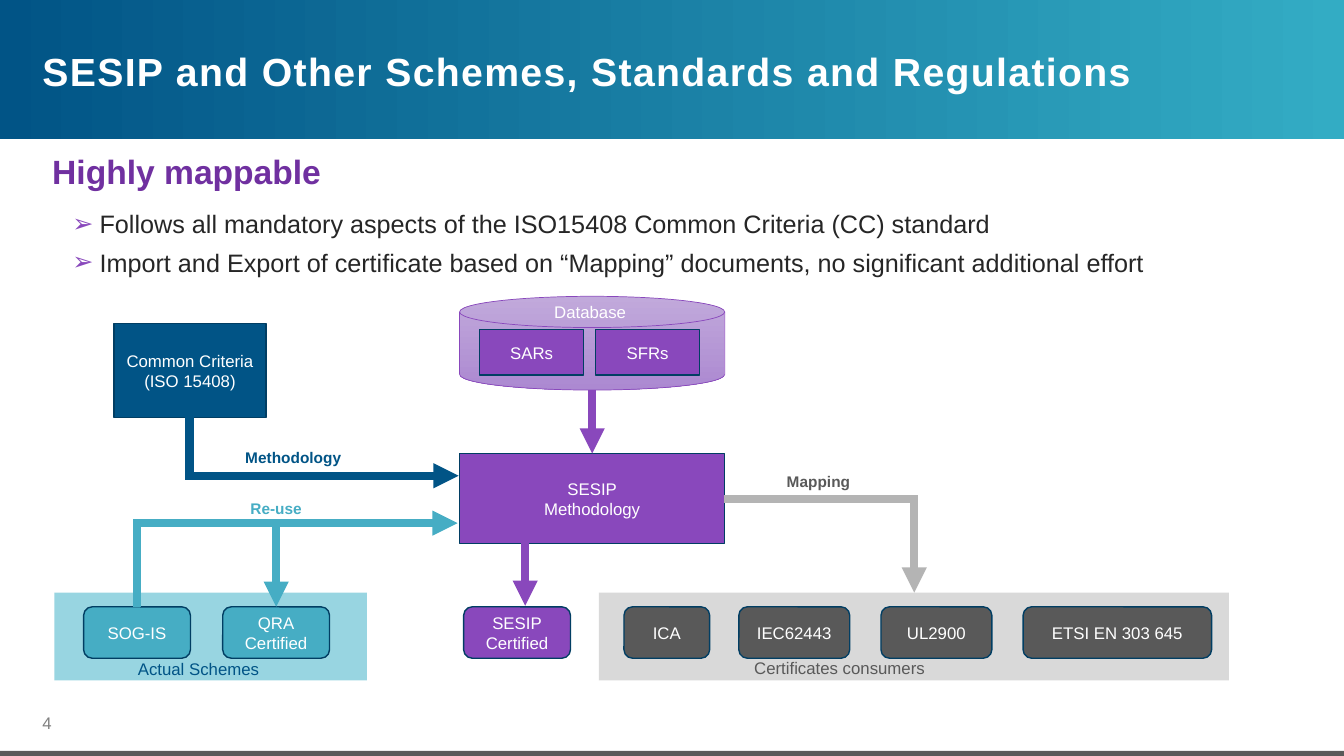
from lxml.etree import SubElement
from pptx import Presentation
from pptx.dml.color import RGBColor
from pptx.enum.shapes import MSO_CONNECTOR, MSO_SHAPE
from pptx.enum.text import MSO_ANCHOR, MSO_AUTO_SIZE, PP_ALIGN
from pptx.oxml.ns import qn
from pptx.util import Inches, Pt

COLS, ROWS = 133.33, 75
CELL = 0.1
FONT = "Arial"
HUES = {
    "navy": "015486", "edge": "013E63", "teal": "46ADC4", "aqua": "33ACC4",
    "plum": "8948BC", "violet": "7030A0", "lilac": "C1A9DB", "mauve": "AC89D1",
    "dark": "595959", "grey": "B4B4B4", "mid": "808080", "ink": "262626",
    "white": "FFFFFF",
}


def hue(name):
    return RGBColor.from_string(HUES[name])


def grid(*cells):
    return [Inches(round(cell * CELL, 3)) for cell in cells]


def style(par, size, color, bold=False):
    for run in par.runs:
        font = run.font
        font.name, font.size, font.bold = FONT, Pt(size), bold
        font.color.rgb = hue(color)


def blend(fill, first, last, angle):
    fill.gradient()
    fill.gradient_angle = angle
    for stop, name in zip(fill.gradient_stops, (first, last)):
        stop.color.rgb = hue(name)


def shape(slide, kind, place, fill=None, line=None, width=1, alpha=None):
    item = slide.shapes.add_shape(kind, *grid(*place))
    item.shadow.inherit = False
    if fill:
        item.fill.solid()
        item.fill.fore_color.rgb = hue(fill)
    if alpha:
        tint = item.fill._xPr.find(".//" + qn("a:srgbClr"))
        SubElement(tint, qn("a:alpha"), val=str(alpha * 1000))
    if line:
        item.line.color.rgb = hue(line)
        item.line.width = Pt(width)
    else:
        item.line.fill.background()
    return item


def box(slide, text, place, fill, kind=MSO_SHAPE.RECTANGLE):
    item = shape(slide, kind, place, fill, "edge")
    frame = item.text_frame
    frame.text = text
    frame.vertical_anchor = MSO_ANCHOR.MIDDLE
    for par in frame.paragraphs:
        par.alignment = PP_ALIGN.CENTER
        style(par, 12, "white")
    return item


def bare(frame):
    frame.margin_left = frame.margin_right = 0
    frame.margin_top = frame.margin_bottom = 0
    frame.vertical_anchor = MSO_ANCHOR.MIDDLE
    frame.word_wrap = True


def label(slide, text, place, color, size=12, bold=False, align=PP_ALIGN.CENTER):
    frame = slide.shapes.add_textbox(*grid(*place)).text_frame
    bare(frame)
    frame.text = text
    par = frame.paragraphs[0]
    par.alignment = align
    style(par, size, color, bold)


def arrow(slide, ends, color, tip="tailEnd", bent=False):
    kind = MSO_CONNECTOR.ELBOW if bent else MSO_CONNECTOR.STRAIGHT
    link = slide.shapes.add_connector(kind, *grid(*ends))
    link.line.color.rgb = hue(color)
    link.line.width = Pt(6)
    props = link._element.spPr
    if bent:
        props.find(qn("a:prstGeom")).set("prst", "bentConnector2")
    stroke = props.find(qn("a:ln"))
    SubElement(stroke, qn("a:miter"), lim="800000")
    SubElement(stroke, qn("a:" + tip), type="triangle")
    SubElement(props, qn("a:effectLst"))
    return link


def frame_page(slide):
    band = shape(slide, MSO_SHAPE.RECTANGLE, (0, 0, COLS, 13.8))
    blend(band.fill, "navy", "aqua", 0)
    shape(slide, MSO_SHAPE.RECTANGLE, (0, ROWS - 0.5, COLS, 0.5), "dark")
    label(slide, "4", (4.2, 68.8, 2.7, 5.8), "mid", align=PP_ALIGN.LEFT)


def head(slide, text):
    title = slide.shapes.title
    slide.shapes._spTree.append(title._element)
    title.left, title.top, title.width, title.height = grid(4.2, 2.5, 125, 10)
    frame = title.text_frame
    bare(frame)
    frame.auto_size = MSO_AUTO_SIZE.NONE
    frame.text = text
    par = frame.paragraphs[0]
    par.alignment = PP_ALIGN.LEFT
    par.line_spacing = 0.8
    style(par, 28, "white", True)
    par.runs[0].font._element.set("spc", "100")


def bullet(par):
    props = par._p.get_or_add_pPr()
    props.set("marL", str(Inches(0.47)))
    props.set("indent", str(Inches(-0.27)))
    paint = SubElement(props, qn("a:buClr"))
    SubElement(paint, qn("a:srgbClr"), val=HUES["plum"])
    SubElement(props, qn("a:buFont"), typeface=FONT)
    SubElement(props, qn("a:buChar"), char="➢")


def body(slide, lead, points):
    frame = slide.shapes.add_textbox(*grid(4.2, 14.5, 125, 14)).text_frame
    frame.word_wrap = True
    frame.text = lead
    first = frame.paragraphs[0]
    first.space_after = Pt(6)
    style(first, 24, "violet", True)
    for point in points:
        par = frame.add_paragraph()
        par.text = point
        bullet(par)
        par.space_before = Pt(6)
        style(par, 18, "ink")


def chart(slide):
    for left, width, fill in ((59.4, 62.5, "grey"), (5.4, 31, "aqua")):
        shape(slide, MSO_SHAPE.RECTANGLE, (left, 58.8, width, 8.7), fill, alpha=50)

    box(slide, "Common Criteria\n(ISO 15408)", (11.3, 32.1, 15.1, 9.3), "navy")
    core = box(slide, "SESIP\nMethodology", (45.6, 45, 26.3, 8.9), "plum")
    disk = shape(slide, MSO_SHAPE.FLOWCHART_MAGNETIC_DISK,
                 (45.6, 29.4, 26.3, 9.3), line="plum", width=0.5)
    blend(disk.fill, "lilac", "mauve", 270)
    for left, text in ((47.6, "SARs"), (59.1, "SFRs")):
        box(slide, text, (left, 32.7, 10.3, 4.5), "plum")

    chips = {}
    for text, left, width, fill in (
        ("SOG-IS", 8.3, 10.6, "teal"),
        ("QRA\nCertified", 22.1, 10.6, "teal"),
        ("SESIP\nCertified", 46, 10.6, "plum"),
        ("ICA", 61.9, 8.5, "dark"),
        ("IEC62443", 73.3, 11, "dark"),
        ("UL2900", 87.4, 11, "dark"),
        ("ETSI EN 303 645", 101.5, 18.7, "dark"),
    ):
        chips[text] = box(slide, text, (left, 60.2, width, 5.1), fill,
                          MSO_SHAPE.ROUNDED_RECTANGLE)

    arrow(slide, (45.5, 47.2, 18.8, 41.4), "navy", "headEnd", True)
    arrow(slide, (52.1, 46.1, 52.1, 60.1), "plum")
    arrow(slide, (58.75, 38.7, 58.75, 45), "plum").end_connect(core, 0)
    arrow(slide, (71.8, 49.5, 90.7, 58.8), "grey", bent=True)
    reuse = arrow(slide, (27.4, 51.9, 27.4, 60.2), "teal")
    reuse.end_connect(chips["QRA\nCertified"], 0)
    arrow(slide, (45.4, 51.9, 13.6, 60.2), "teal", "headEnd", True)

    label(slide, "Database", (45.4, 29.2, 26.3, 3.4), "white")
    for text, left, top, color, size, bold in (
        ("Actual Schemes", 8.9, 64.7, "navy", 12, False),
        ("Certificates consumers", 72.5, 64.6, "dark", 12, False),
        ("Methodology", 18.3, 43.7, "navy", 11, True),
        ("Re-use", 16.6, 48.7, "teal", 11, True),
        ("Mapping", 70.4, 46.1, "dark", 11, True),
    ):
        label(slide, text, (left, top, 21.6, 3.4), color, size, bold)


def main():
    deck = Presentation()
    deck.slide_width, deck.slide_height = grid(COLS, ROWS)
    slide = deck.slides.add_slide(deck.slide_layouts[5])
    frame_page(slide)
    head(slide, "SESIP and Other Schemes, Standards and Regulations")
    body(slide, "Highly mappable", (
        "Follows all mandatory aspects of the ISO15408 Common Criteria (CC) standard",
        "Import and Export of certificate based on “Mapping” documents, "
        "no significant additional effort",
    ))
    chart(slide)
    deck.save("out.pptx")


if __name__ == "__main__":
    main()
